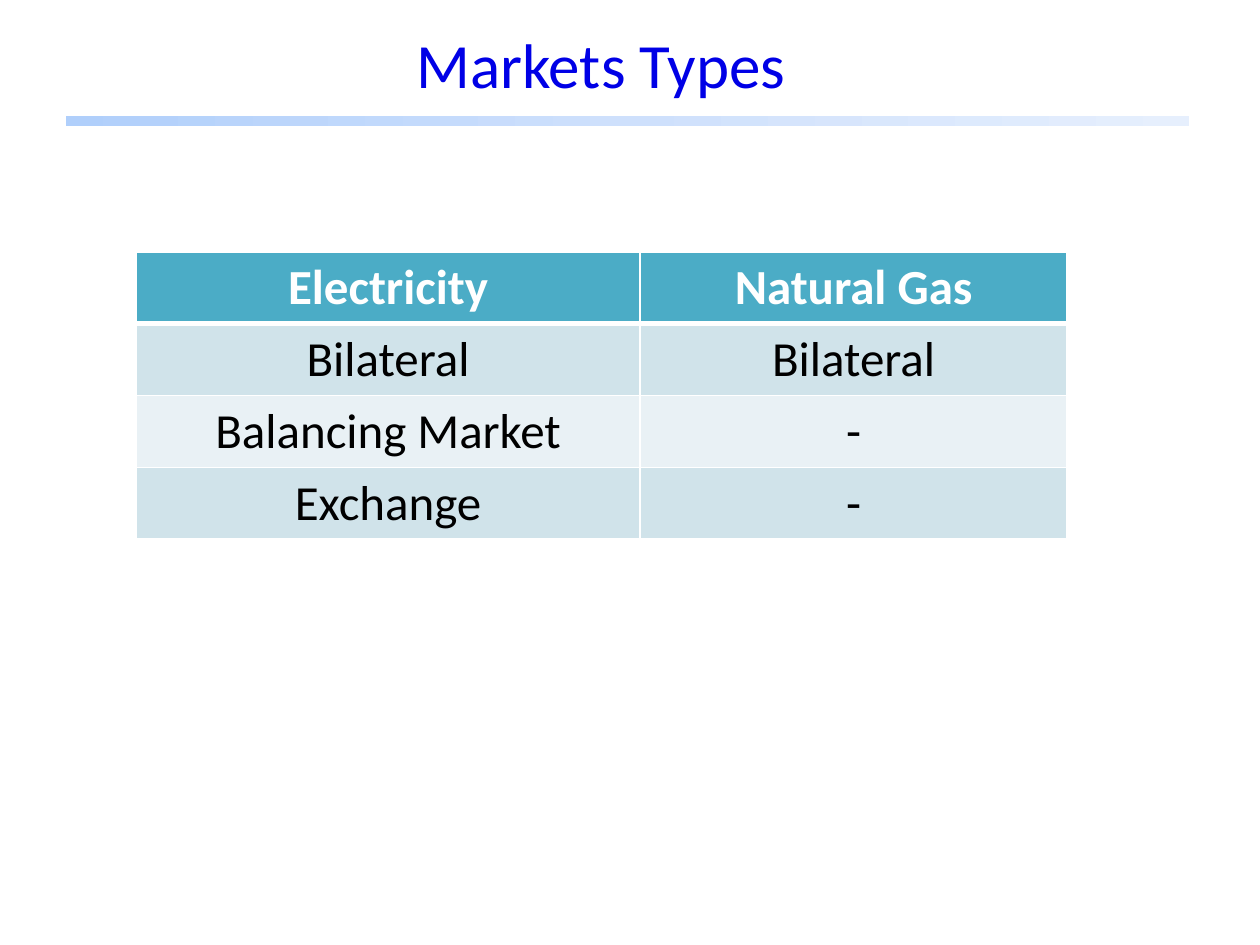
from dataclasses import dataclass
from lxml import etree
from pptx import Presentation
from pptx import util as u
from pptx.dml.color import RGBColor
from pptx.enum import shapes, text
from pptx.oxml.ns import qn


@dataclass(frozen=True)
class Theme:
    font: str = "Calibri"
    title: str = "0000E6"
    head: str = "4BACC6"
    bands: tuple = ("D0E3EA", "E9F1F5")
    white: str = "FFFFFF"
    black: str = "000000"
    bar: tuple = ((0, "B0CFFB"), (50, "CEE0FC"), (100, "E6EFFD"))
    big: int = 36
    body: int = 28
    thin: int = 1
    thick: int = 3


@dataclass(frozen=True)
class Row:
    names: tuple
    fill: str
    ink: str
    bold: bool = False
    top: int = 1
    base: int = 1


T = Theme()
ROWS = (
    Row(("Electricity", "Natural Gas"), T.head, T.white, True, T.thin, T.thick),
    Row(("Bilateral", "Bilateral"), T.bands[0], T.black, top=T.thick),
    Row(("Balancing Market", "-"), T.bands[1], T.black),
    Row(("Exchange", "-"), T.bands[0], T.black),
)


def write(frame, words: str, size: int, ink: str, bold: bool = False) -> None:
    par = frame.paragraphs[0]
    par.alignment = text.PP_ALIGN.CENTER
    run = par.add_run()
    run.text = words
    font = run.font
    font.name, font.size, font.bold = T.font, u.Pt(size), bold
    font.color.rgb = RGBColor.from_string(ink)


def tint(root, ink: str) -> None:
    etree.SubElement(root, qn("a:srgbClr"), val=ink)


def edge(cell, row: Row) -> None:
    props = cell._tc.get_or_add_tcPr()
    sides = {"L": T.thin, "R": T.thin, "T": row.top, "B": row.base}
    for spot, (side, width) in enumerate(sides.items()):
        line = etree.Element(qn(f"a:ln{side}"), w=str(u.Pt(width)))
        tint(etree.SubElement(line, qn("a:solidFill")), T.white)
        props.insert(spot, line)


def add_title(slide) -> None:
    box = slide.shapes.add_textbox(
        u.Inches(0.52), u.Inches(0.17), u.Inches(8.5), u.Inches(0.67))
    frame = box.text_frame
    frame.word_wrap = True
    frame.vertical_anchor = text.MSO_ANCHOR.MIDDLE
    write(frame, "Markets Types", T.big, T.title)


def add_bar(slide) -> None:
    bar = slide.shapes.add_shape(
        shapes.MSO_SHAPE.RECTANGLE,
        u.Inches(0.52), u.Inches(0.92), u.Inches(8.92), u.Inches(0.08))
    bar.shadow.inherit = False
    bar.line.fill.background()
    bar.fill.gradient()
    bar.fill.gradient_angle = 0
    stops = bar._element.spPr.find(qn("a:gradFill")).find(qn("a:gsLst"))
    for stop in list(stops):
        stops.remove(stop)
    for place, ink in T.bar:
        tint(etree.SubElement(stops, qn("a:gs"), pos=str(place * 1000)), ink)


def add_grid(slide) -> None:
    wide, high = (4, 3.39), 0.57
    grid = slide.shapes.add_table(
        len(ROWS), len(wide), u.Inches(1.08), u.Inches(2),
        u.Inches(sum(wide)), u.Inches(high * len(ROWS))).table
    for col, width in zip(grid.columns, wide):
        col.width = u.Inches(width)
    for line, row in zip(grid.rows, ROWS):
        line.height = u.Inches(high)
        for cell, name in zip(line.cells, row.names):
            cell.fill.solid()
            cell.fill.fore_color.rgb = RGBColor.from_string(row.fill)
            edge(cell, row)
            write(cell.text_frame, name, T.body, row.ink, row.bold)


def main() -> None:
    deck = Presentation()
    deck.slide_width, deck.slide_height = u.Inches(10), u.Inches(7.5)
    slide = deck.slides.add_slide(deck.slide_layouts[6])
    add_title(slide)
    add_bar(slide)
    add_grid(slide)
    deck.save("out.pptx")


if __name__ == "__main__":
    main()
